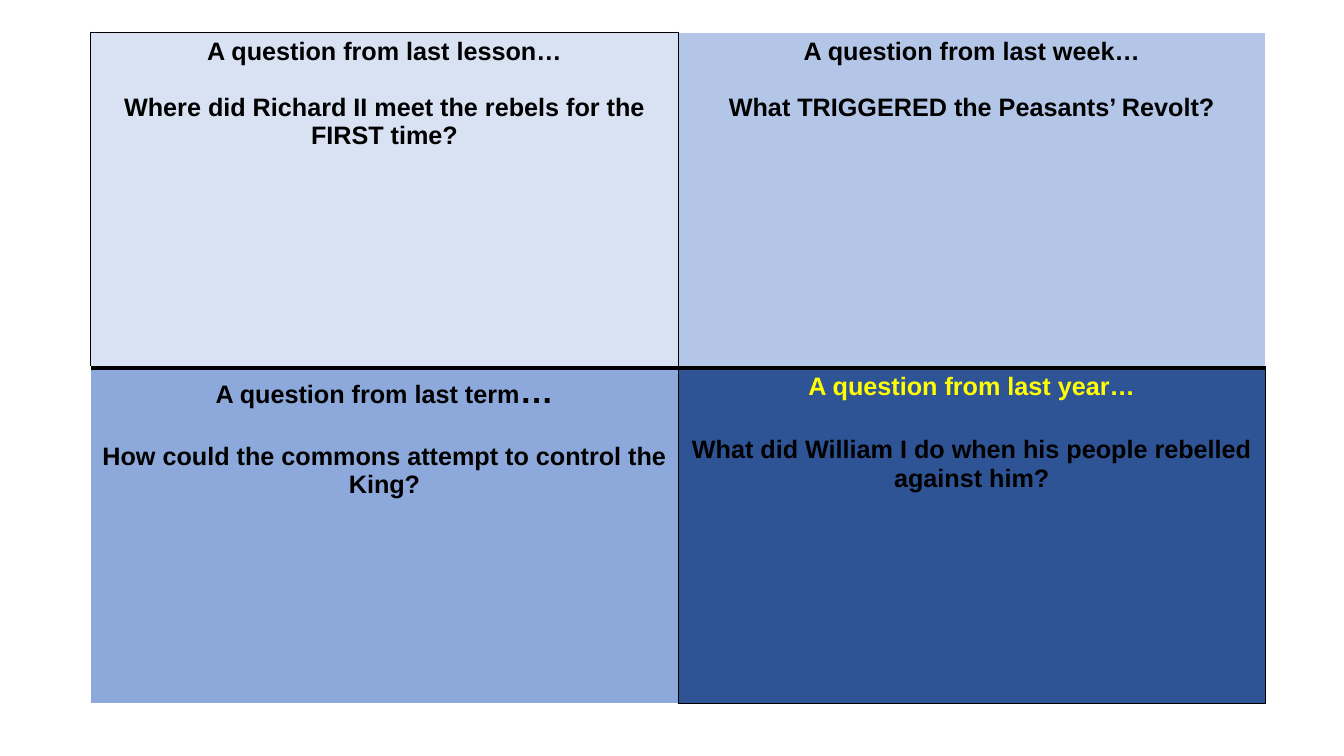
from lxml.etree import SubElement
from pptx import Presentation
from pptx.dml.color import RGBColor
from pptx.enum.text import PP_ALIGN as Align
from pptx.oxml.ns import qn
from pptx.util import Cm, Pt

BLACK, WHITE, YELLOW = "000000", "FFFFFF", "FFFF00"
THIN, THICK = 1, 3


def color(hex_code):
    return RGBColor.from_string(hex_code)


def write(paragraph, text, size=18, ink=BLACK, font="Arial"):
    run = paragraph.add_run()
    run.text = text
    run.font.name = font
    run.font.size = Pt(size)
    run.font.bold = True
    run.font.color.rgb = color(ink)


class QuizSlide:
    def __init__(self, deck):
        self.slide = deck.slides.add_slide(deck.slide_layouts[6])

    def grid(self, left, top, col_width, row_height, rows=2, cols=2):
        frame = self.slide.shapes.add_table(
            rows, cols, Cm(left), Cm(top), Cm(col_width * cols), Cm(row_height * rows))
        grid = frame.table
        grid.first_row = grid.horz_banding = False
        for column in grid.columns:
            column.width = Cm(col_width)
        for row in grid.rows:
            row.height = Cm(row_height)
        return grid

    def borders(self, cell, edges):
        props = cell._tc.get_or_add_tcPr()
        for side, (ink, width) in zip("LRTB", edges):
            line = SubElement(props, qn(f"a:ln{side}"), w=str(Pt(width)))
            fill = SubElement(line, qn("a:solidFill"))
            SubElement(fill, qn("a:srgbClr"), val=ink)

    def question(self, cell, heading, prompt, shade, edges, gap,
                 heading_ink=BLACK, dots_size=18):
        self.borders(cell, edges)
        cell.fill.solid()
        cell.fill.fore_color.rgb = color(shade)
        title = cell.text_frame.paragraphs[0]
        body = cell.text_frame.add_paragraph()
        title.alignment = body.alignment = Align.CENTER
        body.space_before = Pt(gap)
        if dots_size == 18:
            write(title, heading + "…", ink=heading_ink)
        else:
            write(title, heading, ink=heading_ink)
            write(title, "…", size=dots_size, ink=heading_ink)
        write(body, prompt)


def main():
    deck = Presentation()
    deck.slide_width, deck.slide_height = Cm(33.87), Cm(19.05)
    quiz = QuizSlide(deck)
    grid = quiz.grid(left=2.29, top=0.81, col_width=14.8, row_height=8.46)

    # Border kinds; edges run left, right, top, bottom
    thin, thick, pale = (BLACK, THIN), (BLACK, THICK), (WHITE, THIN)

    # Upper row: recent learning
    quiz.question(grid.cell(0, 0), "A question from last lesson",
                  "Where did Richard II meet the rebels for the FIRST time?",
                  "D8E2F3", (thin, thin, thin, thick), gap=20)
    quiz.question(grid.cell(0, 1), "A question from last week",
                  "What TRIGGERED the Peasants’ Revolt?",
                  "B3C6E7", (thin, pale, pale, thick), gap=20)

    # Lower row: older learning
    quiz.question(grid.cell(1, 0), "A question from last term",
                  "How could the commons attempt to control the King?",
                  "8DA9DB", (pale, thin, thick, pale), gap=23, dots_size=24)
    quiz.question(grid.cell(1, 1), "A question from last year",
                  "What did William I do when his people rebelled against him?",
                  "2F5496", (thin, thin, thick, thin), gap=25, heading_ink=YELLOW)

    deck.save("out.pptx")


if __name__ == "__main__":
    main()
